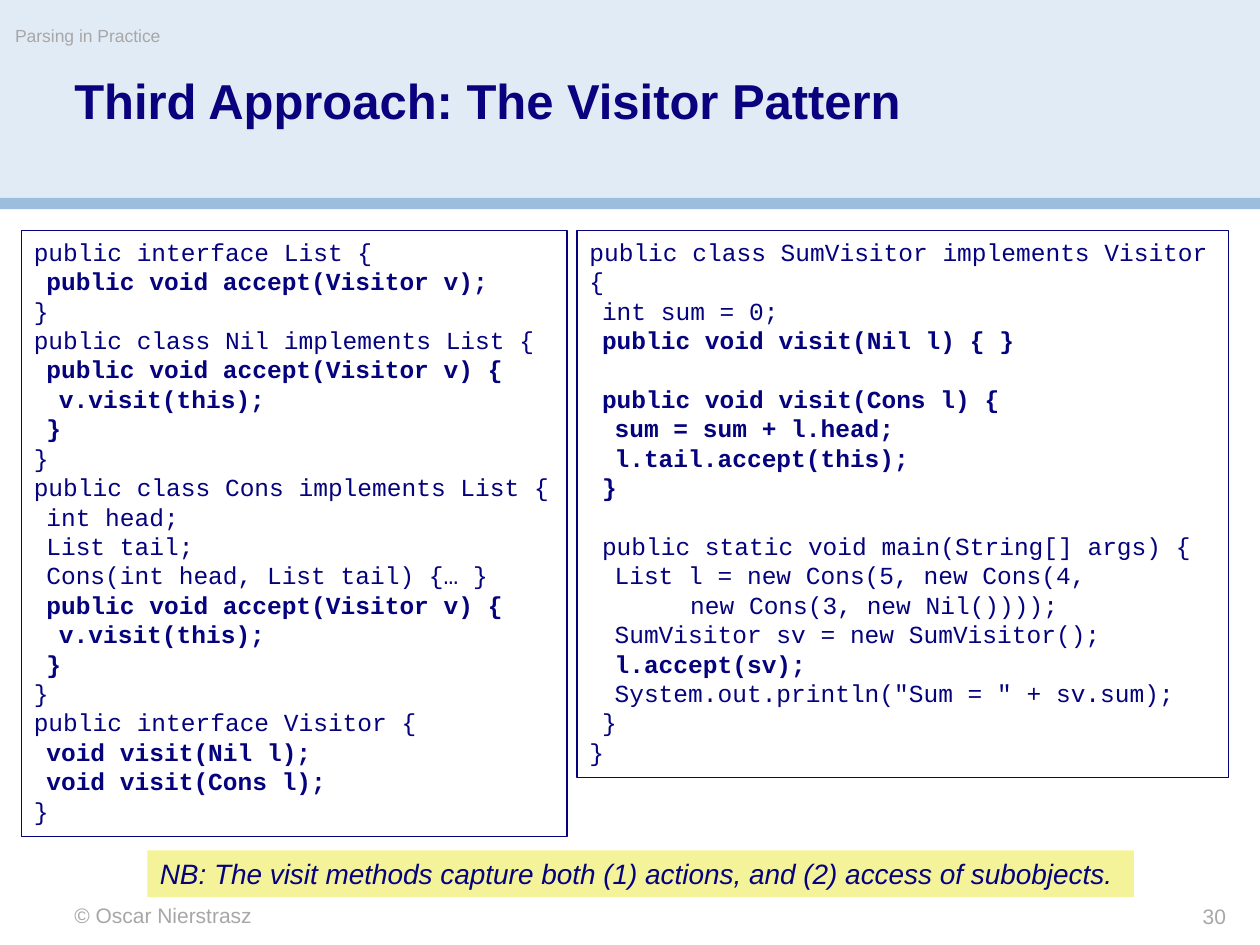
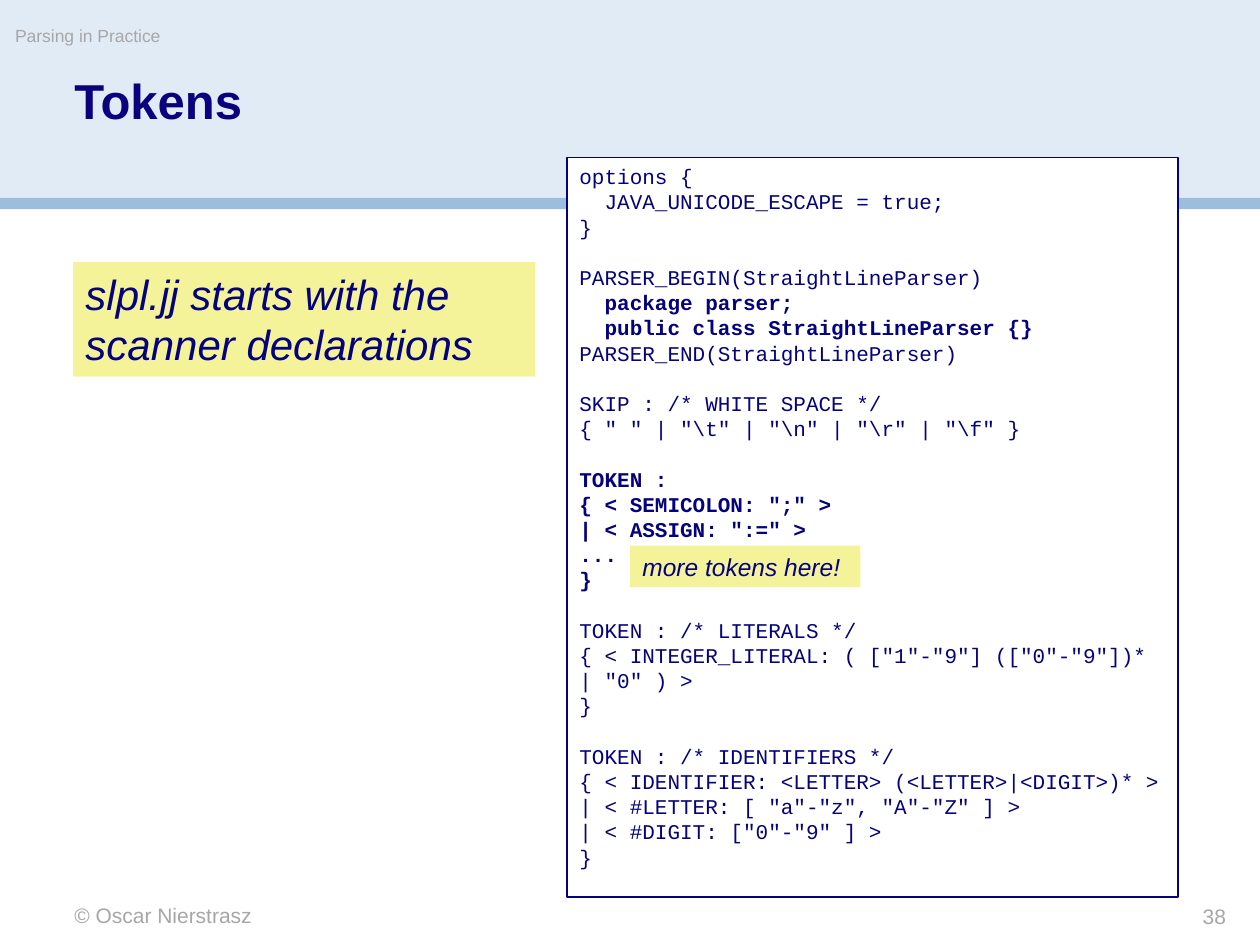
from typing import NamedTuple, Optional

from pptx import Presentation
from pptx.dml.color import RGBColor
from pptx.enum.shapes import MSO_SHAPE
from pptx.enum.text import MSO_ANCHOR, PP_ALIGN
from pptx.shapes.autoshape import Shape
from pptx.slide import Slide
from pptx.util import Emu, Pt

PX = 9144  # 100 px to the inch
INDENT = 10
LINE_PITCH = 1.2

BAND, STRIPE = "E1EBF5", "9CBDDE"
TITLE, INK, GREY = "0A017F", "05027D", "A7A7A7"
WHITE, NOTE_FILL = "FFFFFF", "F5F399"
SANS, MONO = "Arial", "Courier New"


class Area(NamedTuple):
    left: int
    top: int
    width: int
    height: int


class Label(NamedTuple):
    text: str
    area: Area
    size: int
    color: str = GREY
    bold: bool = False
    align: PP_ALIGN = PP_ALIGN.LEFT
    spacing: float = 1.0


class Note(NamedTuple):
    text: str
    area: Area
    size: int


class CodeLine(NamedTuple):
    """One line of code; gap leaves an empty line's height above it."""
    text: str
    indent: int = 0
    bold: bool = False
    gap: bool = False


class Listing(NamedTuple):
    area: Area
    size: int
    lines: list[CodeLine]


class Page(NamedTuple):
    title: str
    number: int
    listings: list[Listing]
    notes: list[Note]


ACCEPT_METHOD = [
    CodeLine("public void accept(Visitor v) {", 1, True),
    CodeLine("v.visit(this);", 2, True),
    CodeLine("}", 1, True),
    CodeLine("}"),
]

LIST_CLASSES = [
    CodeLine("public interface List {"),
    CodeLine("public void accept(Visitor v);", 1, True),
    CodeLine("}"),
    CodeLine("public class Nil implements List {"),
    *ACCEPT_METHOD,
    CodeLine("public class Cons implements List {"),
    CodeLine("int head;", 1),
    CodeLine("List tail;", 1),
    CodeLine("Cons(int head, List tail) {… }", 1),
    *ACCEPT_METHOD,
    CodeLine("public interface Visitor {"),
    CodeLine("void visit(Nil l);", 1, True),
    CodeLine("void visit(Cons l);", 1, True),
    CodeLine("}"),
]

SUM_VISITOR = [
    CodeLine("public class SumVisitor implements Visitor {"),
    CodeLine("int sum = 0;", 1),
    CodeLine("public void visit(Nil l) { }", 1, True),
    CodeLine("public void visit(Cons l) {", 1, True, gap=True),
    CodeLine("sum = sum + l.head;", 2, True),
    CodeLine("l.tail.accept(this);", 2, True),
    CodeLine("}", 1, True),
    CodeLine("public static void main(String[] args) {", 1, gap=True),
    CodeLine("List l = new Cons(5, new Cons(4,", 2),
    CodeLine("new Cons(3, new Nil())));", 8),
    CodeLine("SumVisitor sv = new SumVisitor();", 2),
    CodeLine("l.accept(sv);", 2, True),
    CodeLine('System.out.println("Sum = " + sv.sum);', 2),
    CodeLine("}", 1),
    CodeLine("}"),
]

SCANNER = [
    CodeLine("options {"),
    CodeLine("JAVA_UNICODE_ESCAPE = true;", 2),
    CodeLine("}"),
    CodeLine("PARSER_BEGIN(StraightLineParser)", gap=True),
    CodeLine("package parser;", 2, True),
    CodeLine("public class StraightLineParser {}", 2, True),
    CodeLine("PARSER_END(StraightLineParser)"),
    CodeLine("SKIP : /* WHITE SPACE */", gap=True),
    CodeLine(r'{ " " | "\t" | "\n" | "\r" | "\f" }'),
    CodeLine("TOKEN :", bold=True, gap=True),
    CodeLine('{ < SEMICOLON: ";" >', bold=True),
    CodeLine('| < ASSIGN: ":=" >', bold=True),
    CodeLine("...", bold=True),
    CodeLine("}", bold=True),
    CodeLine("TOKEN : /* LITERALS */", gap=True),
    CodeLine('{ < INTEGER_LITERAL: ( ["1"-"9"] (["0"-"9"])*'),
    CodeLine('| "0" ) >'),
    CodeLine("}"),
    CodeLine("TOKEN : /* IDENTIFIERS */", gap=True),
    CodeLine("{ < IDENTIFIER: <LETTER> (<LETTER>|<DIGIT>)* >"),
    CodeLine('| < #LETTER: [ "a"-"z", "A"-"Z" ] >'),
    CodeLine('| < #DIGIT: ["0"-"9" ] >'),
    CodeLine("}"),
]

PAGES = [
    Page("Third Approach: The Visitor Pattern", 30,
         [Listing(Area(17, 183, 433, 481), 14, LIST_CLASSES),
          Listing(Area(458, 183, 517, 434), 14, SUM_VISITOR)],
         [Note("NB: The visit methods capture both (1) actions, and (2) access of subobjects.",
               Area(117, 675, 783, 37), 16)]),
    Page("Tokens", 38,
         [Listing(Area(450, 125, 485, 587), 12, SCANNER)],
         [Note("slpl.jj starts with the scanner declarations", Area(58, 208, 367, 91), 24),
          Note("more tokens here!", Area(500, 433, 183, 33), 14)]),
]


def rgb(color: str) -> RGBColor:
    return RGBColor.from_string(color)


def emu(area: Area) -> list[Emu]:
    return [Emu(length * PX) for length in area]


def style(paragraph, font: str, size: int, color: str,
          bold: bool = False, italic: bool = False) -> None:
    paragraph.font.name = font
    paragraph.font.size = Pt(size)
    paragraph.font.color.rgb = rgb(color)
    paragraph.font.bold = bold
    paragraph.font.italic = italic


def add_box(slide: Slide, area: Area, fill: str, line: Optional[str] = None) -> Shape:
    box = slide.shapes.add_shape(MSO_SHAPE.RECTANGLE, *emu(area))
    box.shadow.inherit = False
    box.fill.solid()
    box.fill.fore_color.rgb = rgb(fill)
    if line:
        box.line.color.rgb = rgb(line)
        box.line.width = Pt(0.75)
    else:
        box.line.fill.background()
    box.text_frame.word_wrap = True
    box.text_frame.vertical_anchor = MSO_ANCHOR.TOP
    return box


def add_label(slide: Slide, label: Label) -> None:
    frame = slide.shapes.add_textbox(*emu(label.area)).text_frame
    frame.word_wrap = True
    frame.margin_left = frame.margin_top = frame.margin_right = frame.margin_bottom = 0
    paragraph = frame.paragraphs[0]
    paragraph.text = label.text
    paragraph.alignment = label.align
    paragraph.line_spacing = label.spacing
    style(paragraph, SANS, label.size, label.color, label.bold)


def add_note(slide: Slide, note: Note) -> None:
    paragraph = add_box(slide, note.area, NOTE_FILL).text_frame.paragraphs[0]
    paragraph.text = note.text
    paragraph.alignment = PP_ALIGN.LEFT
    paragraph.line_spacing = Pt(note.size * LINE_PITCH)
    style(paragraph, SANS, note.size, INK, italic=True)


def add_listing(slide: Slide, listing: Listing) -> None:
    frame = add_box(slide, listing.area, WHITE, INK).text_frame
    pitch = Pt(listing.size * LINE_PITCH)
    for index, line in enumerate(listing.lines):
        paragraph = frame.add_paragraph() if index else frame.paragraphs[0]
        paragraph.text = line.text
        paragraph.alignment = PP_ALIGN.LEFT
        paragraph.line_spacing = pitch
        paragraph.space_before = pitch if line.gap else Pt(0)
        properties = paragraph._p.get_or_add_pPr()
        properties.set("marL", str(line.indent * INDENT * PX))
        properties.set("indent", "0")
        style(paragraph, MONO, listing.size, INK, line.bold)


def add_frame(slide: Slide, page: Page) -> None:
    """Draw the bands, title, header and footer that every page carries."""
    add_box(slide, Area(0, 0, 1000, 158), BAND)
    add_box(slide, Area(0, 157, 1000, 9), STRIPE)
    for label in (
        Label(page.title, Area(59, 61, 883, 89), 28, TITLE, bold=True, spacing=0.9),
        Label("© Oscar Nierstrasz", Area(59, 716, 417, 20), 12),
        Label("Parsing in Practice", Area(12, 20, 590, 28), 10),
        Label(str(page.number), Area(825, 717, 148, 20), 12, align=PP_ALIGN.RIGHT),
    ):
        add_label(slide, label)


def main() -> None:
    deck = Presentation()
    deck.slide_width, deck.slide_height = Emu(1000 * PX), Emu(750 * PX)
    for page in PAGES:
        slide = deck.slides.add_slide(deck.slide_layouts[6])
        add_frame(slide, page)
        for listing in page.listings:
            add_listing(slide, listing)
        for note in page.notes:
            add_note(slide, note)
    deck.save("out.pptx")


if __name__ == "__main__":
    main()
